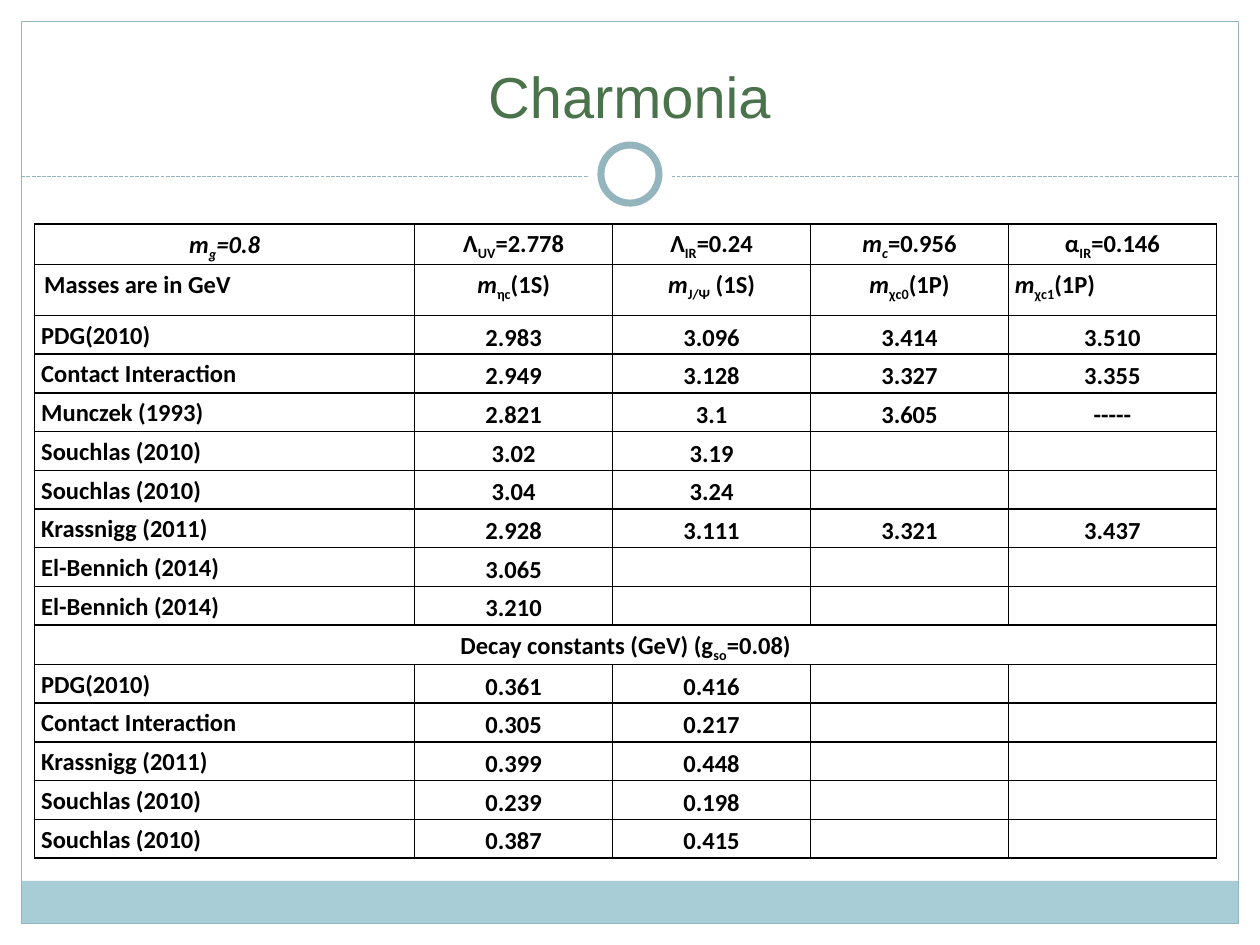
from lxml.etree import SubElement
from pptx import Presentation
from pptx.dml.color import RGBColor
from pptx.enum.dml import MSO_LINE
from pptx.enum.shapes import MSO_CONNECTOR, MSO_SHAPE
from pptx.enum.text import MSO_ANCHOR, PP_ALIGN
from pptx.oxml import parse_xml
from pptx.oxml.ns import nsdecls, qn
from pptx.util import Cm, Pt

COLORS = {"white": "FFFFFF", "band": "A8CDD7", "rule": "94B5BE",
          "title": "4B734B", "ink": "000000"}

TITLE = "Charmonia"

# A rich cell is a list of (text, marks): i = italic, s = subscript.
HEAD = [
    [("m", "i"), ("g", "is"), ("=0.8", "i")],
    [("Λ", ""), ("UV", "s"), ("=2.778", "")],
    [("Λ", ""), ("IR", "s"), ("=0.24", "")],
    [("m", "i"), ("c", "is"), ("=0.956", "")],
    [("α", ""), ("IR", "s"), ("=0.146", "")],
]
STATES = [
    "Masses are in GeV",
    [("m", "i"), ("ηc", "s"), ("(1S)", "")],
    [("m", "i"), ("J/Ψ", "s"), (" (1S)", "")],
    [("m", "i"), ("χc0", "s"), ("(1P)", "")],
    [("m", "i"), ("χc1", "s"), ("(1P)", "")],
]
MASSES = [
    ["PDG(2010)", "2.983", "3.096", "3.414", "3.510"],
    ["Contact Interaction", "2.949", "3.128", "3.327", "3.355"],
    ["Munczek (1993)", "2.821", "3.1", "3.605", "-----"],
    ["Souchlas (2010)", "3.02", "3.19"],
    ["Souchlas (2010)", "3.04", "3.24"],
    ["Krassnigg (2011)", "2.928", "3.111", "3.321", "3.437"],
    ["El-Bennich (2014)", "3.065"],
    ["El-Bennich (2014)", "3.210"],
]
DECAY = [[("Decay constants (GeV) (g", ""), ("so", "s"), ("=0.08)", "")]]
CONSTANTS = [
    ["PDG(2010)", "0.361", "0.416"],
    ["Contact Interaction", "0.305", "0.217"],
    ["Krassnigg (2011)", "0.399", "0.448"],
    ["Souchlas (2010)", "0.239", "0.198"],
    ["Souchlas (2010)", "0.387", "0.415"],
]
ROWS = [HEAD, STATES, *MASSES, DECAY, *CONSTANTS]
SPAN = ROWS.index(DECAY)
WIDTHS = [7.66, 3.99, 3.99, 3.99, 4.19]
HEIGHTS = [0.81, 1.03] + [0.78] * (len(ROWS) - 2)

WIDE, HIGH = 25.4, 19.05
EDGE = 0.43
RULE_Y = 3.56
RING_Y = 3.51


def color(name):
    return RGBColor.from_string(COLORS[name])


def add_shape(slide, kind, box, fill=None, line=None, width=0.75):
    shape = slide.shapes.add_shape(kind, *map(Cm, box))
    shape.shadow.inherit = False
    if fill:
        shape.fill.solid()
        shape.fill.fore_color.rgb = color(fill)
    else:
        shape.fill.background()
    if line:
        shape.line.color.rgb = color(line)
        shape.line.width = Pt(width)
    else:
        shape.line.fill.background()


def add_disc(slide, size, **style):
    box = (WIDE - size) / 2, RING_Y - size / 2, size, size
    add_shape(slide, MSO_SHAPE.OVAL, box, "white", **style)


def add_frame(slide):
    inner = WIDE - 2 * EDGE
    add_shape(slide, MSO_SHAPE.RECTANGLE, (EDGE, 17.76, inner, 0.86), "band")
    add_shape(slide, MSO_SHAPE.RECTANGLE,
              (EDGE, EDGE, inner, HIGH - 2 * EDGE), line="rule")
    rule = slide.shapes.add_connector(
        MSO_CONNECTOR.STRAIGHT,
        Cm(EDGE), Cm(RULE_Y), Cm(WIDE - EDGE), Cm(RULE_Y))
    rule.line.color.rgb = color("rule")
    rule.line.width = Pt(0.75)
    rule.line.dash_style = MSO_LINE.SQUARE_DOT
    SubElement(rule._element.spPr, qn("a:effectLst"))
    add_disc(slide, 1.7)
    add_disc(slide, 1.17, line="rule", width=4)


def add_title(slide):
    box = slide.shapes.add_textbox(Cm(0.84), Cm(0.64), Cm(23.7), Cm(2.11))
    frame = box.text_frame
    frame.word_wrap = True
    frame.vertical_anchor = MSO_ANCHOR.BOTTOM
    para = frame.paragraphs[0]
    para.text = TITLE
    para.alignment = PP_ALIGN.CENTER
    para.font.name = "Arial"
    para.font.size = Pt(33)
    para.font.color.rgb = color("title")


def add_border(cell):
    props = cell._tc.get_or_add_tcPr()
    for side in "LRTB":
        props.append(parse_xml(
            f'<a:ln{side} {nsdecls("a")} w="12700"><a:solidFill>'
            f'<a:srgbClr val="{COLORS["ink"]}"/></a:solidFill></a:ln{side}>'))


def fill_cell(cell, text, row, col):
    add_border(cell)
    cell.fill.background()
    side = 0 if row == 0 and col else 0.13
    cell.margin_left = cell.margin_right = Cm(side)
    cell.margin_top = Cm(0.02 if side else 0)
    cell.margin_bottom = 0
    if row > 1 and col:
        cell.vertical_anchor = MSO_ANCHOR.MIDDLE
    if text == STATES[0]:
        cell.margin_left = Cm(0.19)

    para = cell.text_frame.paragraphs[0]
    left = (col == 0 and row not in (0, SPAN)) or text == STATES[-1]
    para.alignment = PP_ALIGN.LEFT if left else PP_ALIGN.CENTER
    para.line_spacing = 1.15
    para.space_after = Pt(10)
    para.font.name = "Calibri"
    para.font.size = Pt(14)
    para.font.bold = True
    para.font.color.rgb = color("ink")
    if not text:
        para._p.get_or_add_endParaRPr().set("sz", "1400")
        return
    for part, marks in [(text, "")] if isinstance(text, str) else text:
        run = para.add_run()
        run.text = part
        if "i" in marks:
            run.font.italic = True
        if "s" in marks:
            run._r.get_or_add_rPr().set("baseline", "-25000")


def add_grid(slide):
    table = slide.shapes.add_table(
        len(ROWS), len(WIDTHS), Cm(0.7), Cm(4.52),
        Cm(sum(WIDTHS)), Cm(sum(HEIGHTS))).table
    table.first_row = table.horz_banding = False
    for col, width in zip(table.columns, WIDTHS):
        col.width = Cm(width)
    for row, high in zip(table.rows, HEIGHTS):
        row.height = Cm(high)
    for r, row in enumerate(ROWS):
        for c in range(len(WIDTHS)):
            fill_cell(table.cell(r, c), row[c] if c < len(row) else "", r, c)
    table.cell(SPAN, 0).merge(table.cell(SPAN, len(WIDTHS) - 1))


def main():
    deck = Presentation()
    deck.slide_width, deck.slide_height = Cm(WIDE), Cm(HIGH)
    slide = deck.slides.add_slide(deck.slide_layouts[6])
    add_frame(slide)
    add_title(slide)
    add_grid(slide)
    deck.save("out.pptx")


if __name__ == "__main__":
    main()
